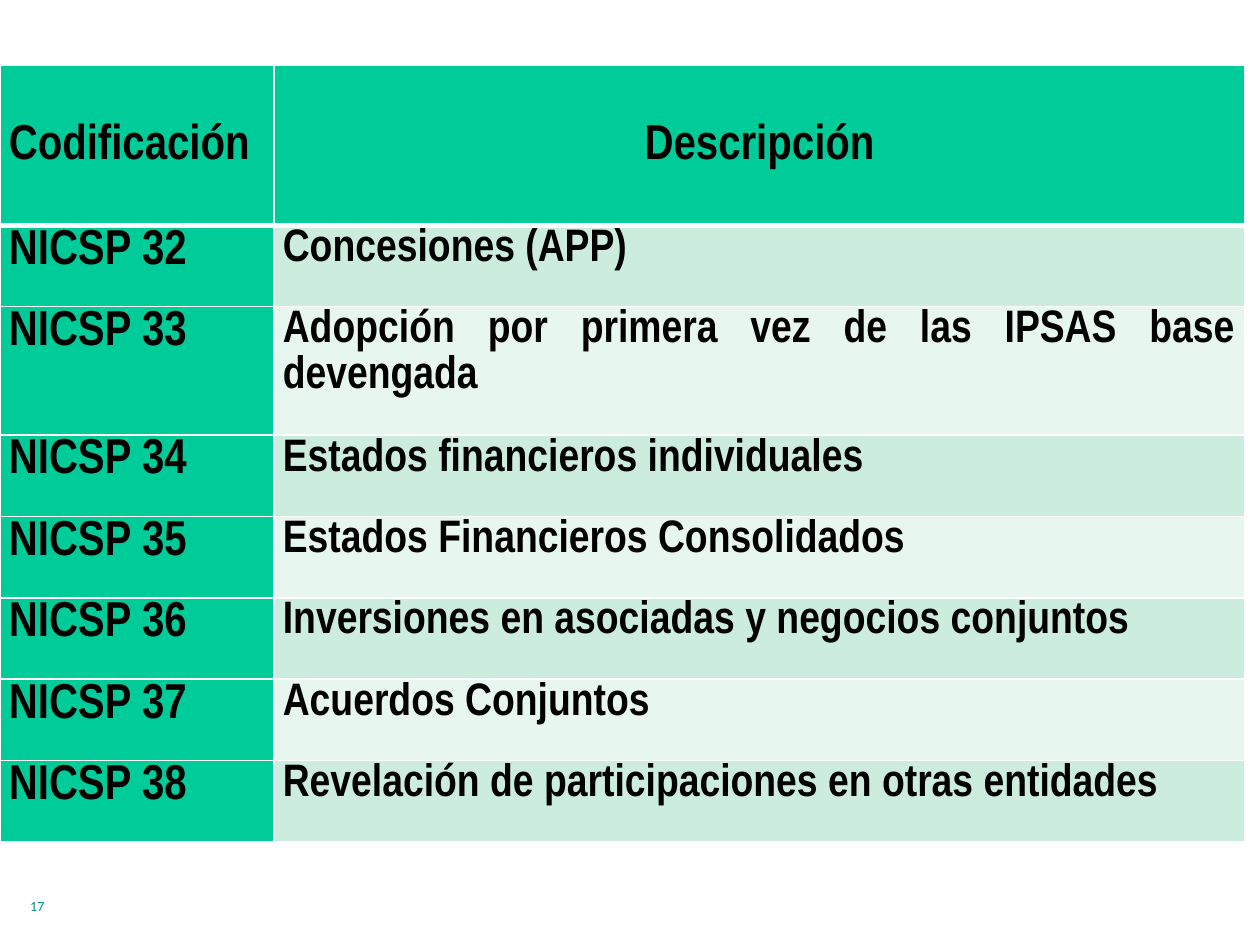
from lxml import etree
from pptx import Presentation
from pptx.dml.color import RGBColor
from pptx.enum import text
from pptx.oxml.ns import qn
from pptx.util import Cm, Pt

GREEN, MINT, PALE = "00CC99", "CCECDE", "E7F6EF"
WHITE, BLACK, TEAL = "FFFFFF", "000000", "00918E"

HEADINGS = ("Codificación", "Descripción")
STANDARDS = (
    ("NICSP 32", "Concesiones (APP)"),
    ("NICSP 33", "Adopción por primera vez de las IPSAS base devengada"),
    ("NICSP 34", "Estados financieros individuales"),
    ("NICSP 35", "Estados Financieros Consolidados"),
    ("NICSP 36", "Inversiones en asociadas y negocios conjuntos"),
    ("NICSP 37", "Acuerdos Conjuntos"),
    ("NICSP 38", "Revelación de participaciones en otras entidades"),
)
HEADER_HEIGHT, ROW_HEIGHT, TWO_LINE_HEIGHT = 3.22, 1.64, 2.59
CODE_SHARE = 0.22


def color(value):
    return RGBColor.from_string(value)


def set_borders(cell, **widths):
    """Draw white borders, in points; to be called before the cell is filled."""
    properties = cell._tc.get_or_add_tcPr()
    for side in "LRTB":
        line = etree.SubElement(properties, qn(f"a:ln{side}"),
                                w=str(Pt(widths.get(side, 1))))
        fill = etree.SubElement(line, qn("a:solidFill"))
        etree.SubElement(fill, qn("a:srgbClr"), val=WHITE)


def style_font(font, name, size, value, bold=False):
    font.name, font.size, font.bold = name, Pt(size), bold
    font.color.rgb = color(value)


def fill_cell(cell, words, fill, size, align=text.PP_ALIGN.JUSTIFY, **borders):
    set_borders(cell, **borders)
    cell.fill.solid()
    cell.fill.fore_color.rgb = color(fill)
    cell.margin_left = cell.margin_right = Cm(0.18)
    cell.margin_top = cell.margin_bottom = 0
    cell.text = words
    para = cell.text_frame.paragraphs[0]
    para.alignment = align
    para.line_spacing = 1.07
    style_font(para.font, "Arial Narrow", size, BLACK, bold=True)


def add_standards_table(page, left, top, width):
    heights = [HEADER_HEIGHT] + [
        TWO_LINE_HEIGHT if len(description) > 50 else ROW_HEIGHT
        for _, description in STANDARDS]
    table = page.shapes.add_table(len(heights), 2, Cm(left), Cm(top),
                                  Cm(width), Cm(sum(heights))).table
    table.columns[0].width = Cm(width * CODE_SHARE)
    table.columns[1].width = Cm(width * (1 - CODE_SHARE))
    for row, height in zip(table.rows, heights):
        row.height = Cm(height)

    aligns = (text.PP_ALIGN.JUSTIFY, text.PP_ALIGN.CENTER)
    for column, (heading, align) in enumerate(zip(HEADINGS, aligns)):
        cell = table.cell(0, column)
        fill_cell(cell, heading, GREEN, 28, align, B=3)
        cell.vertical_anchor = text.MSO_ANCHOR.MIDDLE

    for index, (code, description) in enumerate(STANDARDS, start=1):
        top_line = 3 if index == 1 else 1
        fill_cell(table.cell(index, 0), code, GREEN, 28, T=top_line)
        fill_cell(table.cell(index, 1), description,
                  MINT if index % 2 else PALE, 26, T=top_line)


def add_page_number(page, left, top, width, height, number):
    box = page.shapes.add_textbox(Cm(left), Cm(top), Cm(width), Cm(height))
    box.text_frame.word_wrap = True
    para = box.text_frame.paragraphs[0]
    para.text = str(number)
    style_font(para.font, "Calibri", 8, TEAL)


def main():
    deck = Presentation()
    deck.slide_width, deck.slide_height = Cm(25.4), Cm(19.05)
    page = deck.slides.add_slide(deck.slide_layouts[6])
    add_standards_table(page, 0, 1.32, 25.1)
    add_page_number(page, 0.36, 17.96, 5.28, 0.89, 17)
    deck.save("out.pptx")


if __name__ == "__main__":
    main()
